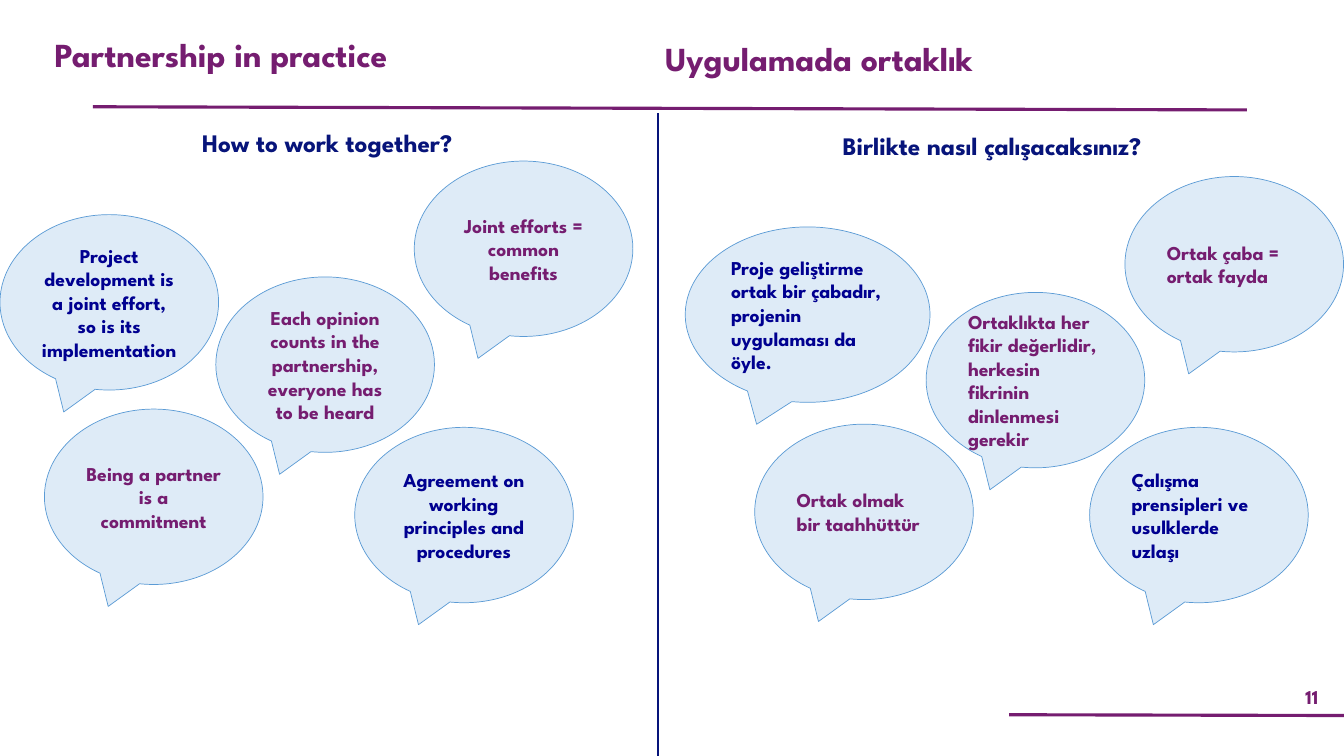
from dataclasses import dataclass

from lxml.etree import SubElement
from pptx import Presentation
from pptx.dml.color import RGBColor
from pptx.enum.shapes import MSO_CONNECTOR, MSO_SHAPE
from pptx.enum.text import MSO_ANCHOR, MSO_AUTO_SIZE, PP_ALIGN
from pptx.oxml.ns import qn
from pptx.shapes.base import BaseShape
from pptx.slide import Slide
from pptx.util import Cm, Pt

FONT = "League Spartan"
COLOURS = {
    "plum": "751D70",
    "navy": "07147A",
    "blue": "000090",
    "pale": "DEEBF7",
    "outline": "5B9BD5",
}
BUBBLE_WIDTH, BUBBLE_HEIGHT = 5.51, 4.42


@dataclass(frozen=True)
class Rule:
    start: tuple[float, float]
    end: tuple[float, float]
    colour: str
    weight: float


@dataclass(frozen=True)
class Label:
    text: str
    left: float
    top: float
    width: float
    height: float
    size: float
    colour: str
    align: PP_ALIGN
    anchor: MSO_ANCHOR = MSO_ANCHOR.TOP
    line_spacing: float = 0.9


@dataclass(frozen=True)
class Bubble:
    text: str
    left: float
    top: float
    colour: str
    width: float = BUBBLE_WIDTH


RULES = [
    Rule((2.34, 2.69), (31.42, 2.77), "plum", 2.25),
    Rule((25.43, 18.01), (33.87, 18.03), "plum", 2.25),
    Rule((16.59, 19.05), (16.59, 2.84), "navy", 1.5),
]

TITLE = Label("Partnership in practice", 1.12, 0.84, 24.71, 1.65, 24, "plum",
              PP_ALIGN.JUSTIFY)
LABELS = [
    Label("Uygulamada ortaklık", 16.51, 0.94, 10.41, 1.24, 24, "plum", PP_ALIGN.JUSTIFY),
    Label("How to work together?", 0.51, 3.18, 15.47, 14.25, 18, "navy", PP_ALIGN.CENTER),
    Label("Birlikte nasıl çalışacaksınız?", 17.27, 3.25, 15.47, 14.25, 18, "navy",
          PP_ALIGN.CENTER),
    Label("11", 32.26, 17.09, 1.6, 0.91, 14, "plum", PP_ALIGN.CENTER,
          MSO_ANCHOR.MIDDLE, 1.0),
]

ENGLISH_BUBBLES = [
    Bubble("Project development is a joint effort, so is its implementation",
           0, 5.41, "blue"),
    Bubble("Each opinion counts in the partnership, everyone has to be heard",
           5.44, 6.98, "plum"),
    Bubble("Agreement on working principles and procedures", 8.94, 10.77, "blue"),
    Bubble("Joint efforts = common benefits", 10.44, 4.06, "plum"),
    Bubble("Being a partner is a commitment", 1.12, 10.31, "plum"),
]
TURKISH_BUBBLES = [
    Bubble("Proje geliştirme ortak bir çabadır, projenin uygulaması da öyle.",
           17.27, 5.72, "blue", 6.17),
    Bubble("Ortaklıkta her fikir değerlidir, herkesin fikrinin dinlenmesi gerekir",
           23.34, 7.37, "plum"),
    Bubble("Çalışma prensipleri ve usulklerde uzlaşı", 27.46, 10.77, "blue"),
    Bubble("Ortak çaba = ortak fayda", 28.35, 4.45, "plum"),
    Bubble("Ortak olmak bir taahhüttür", 19.02, 10.69, "plum"),
]


def rgb(name: str) -> RGBColor:
    return RGBColor.from_string(COLOURS[name])


def write(shape: BaseShape, text: str, size: float, colour: str, align: PP_ALIGN,
          anchor: MSO_ANCHOR, line_spacing: float = 1.0) -> None:
    frame = shape.text_frame
    frame.text = text
    frame.word_wrap = True
    frame.auto_size = MSO_AUTO_SIZE.NONE
    frame.vertical_anchor = anchor
    paragraph = frame.paragraphs[0]
    paragraph.alignment = align
    paragraph.line_spacing = line_spacing
    paragraph.space_before = Pt(0)
    font = paragraph.runs[0].font
    font.name = FONT
    font.size = Pt(size)
    font.bold = True
    font.color.rgb = rgb(colour)


def fill_label(shape: BaseShape, label: Label) -> None:
    shape.left, shape.top = Cm(label.left), Cm(label.top)
    shape.width, shape.height = Cm(label.width), Cm(label.height)
    write(shape, label.text, label.size, label.colour, label.align,
          label.anchor, label.line_spacing)


def draw_rule(page: Slide, rule: Rule) -> None:
    points = [Cm(value) for value in rule.start + rule.end]
    connector = page.shapes.add_connector(MSO_CONNECTOR.STRAIGHT, *points)
    connector.line.color.rgb = rgb(rule.colour)
    connector.line.width = Pt(rule.weight)
    SubElement(connector._element.spPr, qn("a:effectLst"))


def draw_bubble(page: Slide, bubble: Bubble, align: PP_ALIGN) -> None:
    shape = page.shapes.add_shape(
        MSO_SHAPE.OVAL_CALLOUT, Cm(bubble.left), Cm(bubble.top),
        Cm(bubble.width), Cm(BUBBLE_HEIGHT))
    shape.shadow.inherit = False
    shape.fill.solid()
    shape.fill.fore_color.rgb = rgb("pale")
    shape.line.color.rgb = rgb("outline")
    shape.line.width = Pt(0.5)
    write(shape, bubble.text, 14, bubble.colour, align, MSO_ANCHOR.MIDDLE)


def main() -> None:
    deck = Presentation()
    deck.slide_width, deck.slide_height = Cm(33.87), Cm(19.05)
    page = deck.slides.add_slide(deck.slide_layouts.get_by_name("Title Only"))
    fill_label(page.shapes.title, TITLE)
    for rule in RULES:
        draw_rule(page, rule)
    for label in LABELS:
        fill_label(page.shapes.add_textbox(0, 0, 0, 0), label)
    for bubble in ENGLISH_BUBBLES:
        draw_bubble(page, bubble, PP_ALIGN.CENTER)
    for bubble in TURKISH_BUBBLES:
        draw_bubble(page, bubble, PP_ALIGN.LEFT)
    deck.save("out.pptx")


if __name__ == "__main__":
    main()
